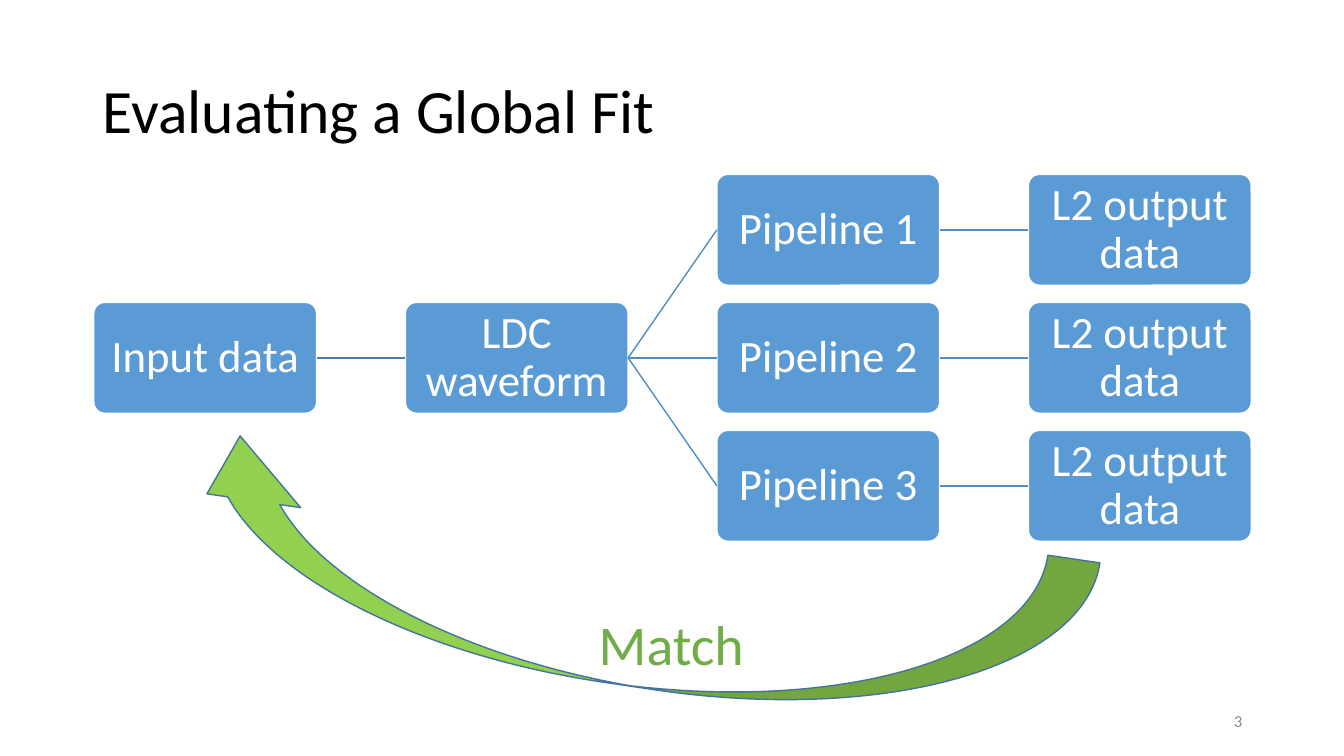
"""Build the slide that shows how a global fit is evaluated."""
from lxml import etree
from pptx import Presentation
from pptx.dml.color import RGBColor
from pptx.enum.shapes import MSO_CONNECTOR, MSO_SHAPE
from pptx.enum.text import MSO_ANCHOR, PP_ALIGN
from pptx.oxml.ns import qn
from pptx.util import Inches, Pt

STRAIGHT = MSO_CONNECTOR.STRAIGHT
ROUNDED, CURVED_UP = MSO_SHAPE.ROUNDED_RECTANGLE, MSO_SHAPE.CURVED_UP_ARROW
TOP, MIDDLE = MSO_ANCHOR.TOP, MSO_ANCHOR.MIDDLE
LEFT, CENTER, RIGHT = PP_ALIGN.LEFT, PP_ALIGN.CENTER, PP_ALIGN.RIGHT
LEFT_SIDE, RIGHT_SIDE = 1, 3

TITLE = "Evaluating a Global Fit"
FEEDBACK = "Match"
PAGE = "3"
STEPS = {
    "input": ("Input data", 0, 1),
    "waveform": ("LDC waveform", 1, 1),
    "pipeline 1": ("Pipeline 1", 2, 0),
    "pipeline 2": ("Pipeline 2", 2, 1),
    "pipeline 3": ("Pipeline 3", 2, 2),
    "output 1": ("L2 output data", 3, 0),
    "output 2": ("L2 output data", 3, 1),
    "output 3": ("L2 output data", 3, 2),
}
LINKS = [("input", "waveform")]
for number in (1, 2, 3):
    LINKS += [("waveform", f"pipeline {number}"),
              (f"pipeline {number}", f"output {number}")]

COLORS = {"title": "000000", "step": "5B9BD5", "white": "FFFFFF",
          "first link": "497CAB", "link": "538DC1", "arrow": "92D050",
          "arrow edge": "43739E", "feedback": "70AD47", "page": "8C8C8C"}
FONT = "Calibri"
GRID_LEFT, GRID_TOP = 0.93, 1.73
COLUMN_PITCH, ROW_PITCH = 3.09, 1.27
STEP_WIDTH, STEP_HEIGHT = 2.21, 1.1


def color(key):
    return RGBColor.from_string(COLORS[key])


def box(left, top, width, height):
    return [Inches(length) for length in (left, top, width, height)]


def write(shape, text, size, key, align=LEFT, anchor=MIDDLE, spacing=1.0, wrap=True):
    frame = shape.text_frame
    frame.text = text
    frame.word_wrap = wrap
    frame.vertical_anchor = anchor
    paragraph = frame.paragraphs[0]
    paragraph.alignment = align
    paragraph.line_spacing = spacing
    font = paragraph.runs[0].font
    font.name, font.size = FONT, Pt(size)
    font.color.rgb = color(key)


def add_filled(shapes, preset, place, fill, edge, adjustments):
    shape = shapes.add_shape(preset, *place)
    shape.shadow.inherit = False
    shape.fill.solid()
    shape.fill.fore_color.rgb = color(fill)
    shape.line.color.rgb = color(edge)
    shape.line.width = Pt(1)
    for index, value in enumerate(adjustments):
        shape.adjustments[index] = value
    return shape


def add_step(shapes, text, column, row):
    place = box(GRID_LEFT + column * COLUMN_PITCH, GRID_TOP + row * ROW_PITCH,
                STEP_WIDTH, STEP_HEIGHT)
    step = add_filled(shapes, ROUNDED, place, "step", "white", [0.1])
    frame = step.text_frame
    frame.margin_left = frame.margin_right = Inches(0.02)
    frame.margin_top = frame.margin_bottom = Inches(0.02)
    write(step, text, 32, "white", CENTER, spacing=0.9)
    return step


def add_link(shapes, start, end, key):
    link = shapes.add_connector(STRAIGHT, 0, 0, 0, 0)
    link.begin_connect(start, RIGHT_SIDE)
    link.end_connect(end, LEFT_SIDE)
    link.line.color.rgb = color(key)
    link.line.width = Pt(1)
    etree.SubElement(link._element.spPr, qn("a:effectLst"))


def main():
    deck = Presentation()
    deck.slide_width, deck.slide_height = Inches(13.33), Inches(7.5)
    shapes = deck.slides.add_slide(deck.slide_layouts[6]).shapes

    title = shapes.add_textbox(*box(0.92, 0.4, 11.5, 1.45))
    write(title, TITLE, 44, "title", spacing=0.9)

    steps = {key: add_step(shapes, *step) for key, step in STEPS.items()}
    for start, end in LINKS:
        add_link(shapes, steps[start], steps[end],
                 "first link" if start == "input" else "link")

    arrow = add_filled(shapes, CURVED_UP, box(1.73, 4.91, 9.09, 1.89),
                       "arrow", "arrow edge", [0.276, 0.497, 0.326])
    arrow.rotation = 8.4
    arrow._element.spPr.find(qn("a:xfrm")).set("flipH", "1")

    feedback = shapes.add_textbox(*box(5.84, 6, 1.66, 0.77))
    write(feedback, FEEDBACK, 40, "feedback", anchor=TOP, wrap=False)
    page = shapes.add_textbox(*box(9.42, 6.95, 3, 0.4))
    write(page, PAGE, 12, "page", RIGHT)

    deck.save("out.pptx")


if __name__ == "__main__":
    main()
